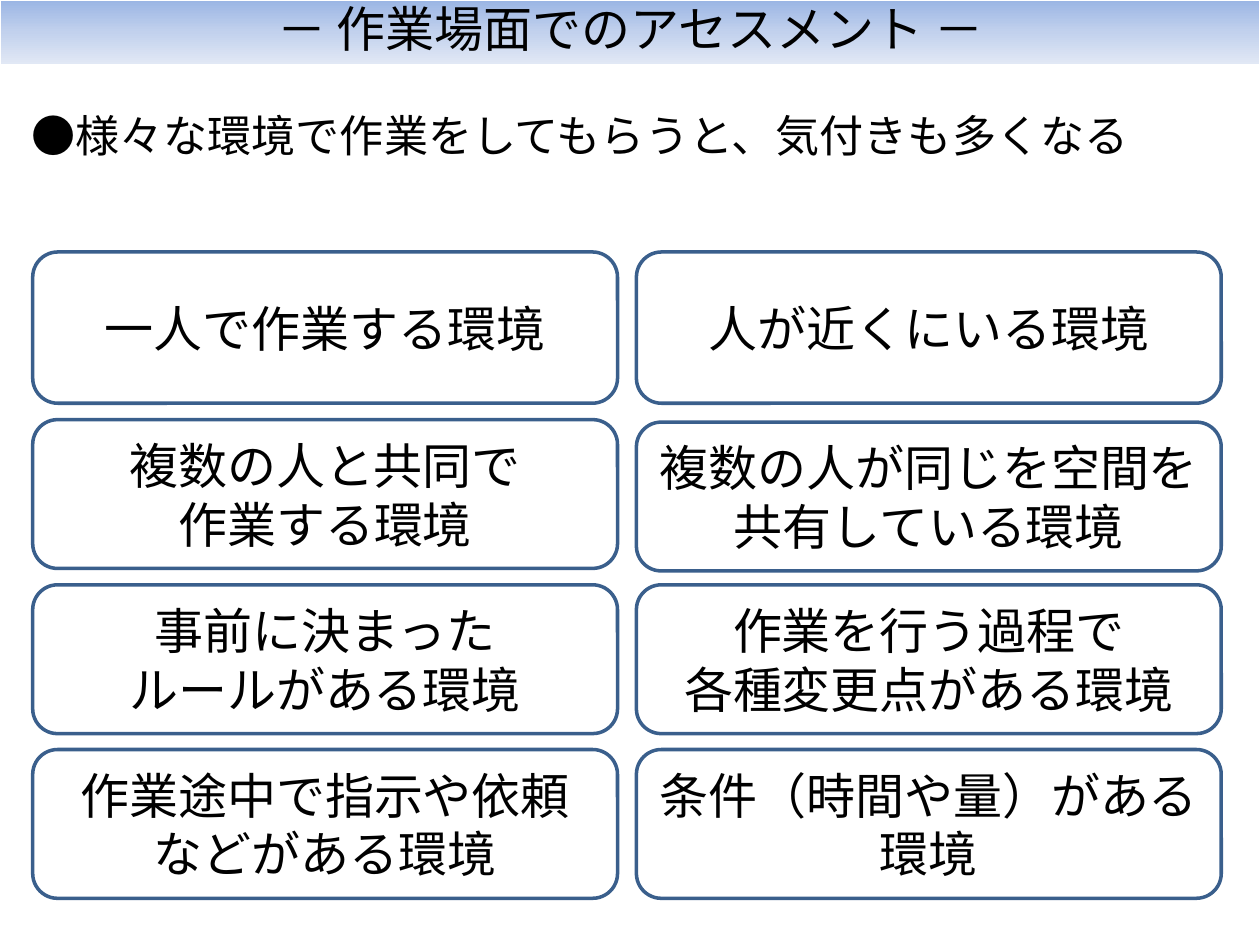
import copy

import lxml.etree
import pptx
import pptx.dml.color
import pptx.enum.shapes
import pptx.enum.text
import pptx.oxml.ns
import pptx.util

Cm = pptx.util.Cm
COLOURS = {
    "text": "000000",
    "card": "FFFFFF",
    "outline": "3A5F8C",
    "band_top": "9AB5E4",
    "band_middle": "C2D1ED",
    "band_bottom": "E1E8F5",
}


def rgb(name):
    return pptx.dml.color.RGBColor.from_string(COLOURS[name])


def write_text(box, text, size=28, font="Noto Sans CJK JP", colour="text",
               align="CENTER", anchor="MIDDLE", line_spacing=None, space_before=None):
    frame = box.text_frame
    frame.word_wrap = True
    frame.vertical_anchor = pptx.enum.text.MSO_ANCHOR[anchor]
    for index, line in enumerate(text.split("\n")):
        para = frame.add_paragraph() if index else frame.paragraphs[0]
        para.alignment = pptx.enum.text.PP_ALIGN[align]
        para.line_spacing = line_spacing
        para.space_before = space_before
        span = para.add_run()
        span.text = line
        span.font.size = pptx.util.Pt(size)
        span.font.color.rgb = rgb(colour)
        span.font.name = font
        east_asian = lxml.etree.SubElement(span.font._element, pptx.oxml.ns.qn("a:ea"))
        east_asian.set("typeface", font)


class SlideBuilder:
    """Holds the shape style and the page being built."""

    def __init__(self, page, outline="outline", outline_width=2):
        self.page = page
        self.outline = outline
        self.outline_width = outline_width

    def shape(self, kind, left, top, width, height, outline, outline_width):
        box = self.page.shapes.add_shape(
            pptx.enum.shapes.MSO_SHAPE[kind], Cm(left), Cm(top), Cm(width), Cm(height))
        box.shadow.inherit = False
        box.line.color.rgb = rgb(outline)
        box.line.width = pptx.util.Pt(outline_width)
        return box

    def card(self, text, left, top, width, height):
        box = self.shape("ROUNDED_RECTANGLE", left, top, width, height,
                         self.outline, self.outline_width)
        box.fill.solid()
        box.fill.fore_color.rgb = rgb("card")
        write_text(box, text)

    def lead(self, text, left, top, width, height):
        box = self.page.shapes.add_textbox(Cm(left), Cm(top), Cm(width), Cm(height))
        write_text(box, text, size=25.2, align="LEFT", anchor="TOP",
                   space_before=pptx.util.Pt(5))

    def title_band(self, text, width, height):
        box = self.shape("RECTANGLE", 0, 0, width, height, "card", 0.75)
        box.fill.gradient()
        box.fill.gradient_angle = 270
        first = box._element.xpath(".//a:gs")[0]
        first.addnext(copy.deepcopy(first))
        stops = zip(box.fill.gradient_stops, ("band_top", "band_middle", "band_bottom"))
        for index, (stop, colour) in enumerate(stops):
            stop.position = index / 2
            stop.color.rgb = rgb(colour)
        write_text(box, text, anchor="BOTTOM", line_spacing=0.9)


def main():
    deck = pptx.Presentation()
    deck.slide_width, deck.slide_height = Cm(25.4), Cm(19.05)
    builder = SlideBuilder(deck.slides.add_slide(deck.slide_layouts[6]))

    builder.lead("●様々な環境で作業をしてもらうと、気付きも多くなる", 0.38, 2.06, 24.66, 1.8)

    columns = (0.66, 12.83)
    rows = (
        ((5.08, 5.08), 3.05, ("一人で作業する環境", "人が近くにいる環境")),
        ((8.46, 8.51), 3, ("複数の人と共同で\n作業する環境",
                           "複数の人が同じを空間を\n共有している環境")),
        ((11.79, 11.79), 3, ("事前に決まった\nルールがある環境",
                             "作業を行う過程で\n各種変更点がある環境")),
        ((15.11, 15.11), 3, ("作業途中で指示や依頼\nなどがある環境",
                             "条件（時間や量）がある環境")),
    )
    for tops, height, texts in rows:
        for left, top, text in zip(columns, tops, texts):
            builder.card(text, left, top, 11.79, height)

    builder.title_band("－ 作業場面でのアセスメント －", 25.4, 1.3)
    deck.save("out.pptx")


if __name__ == "__main__":
    main()
